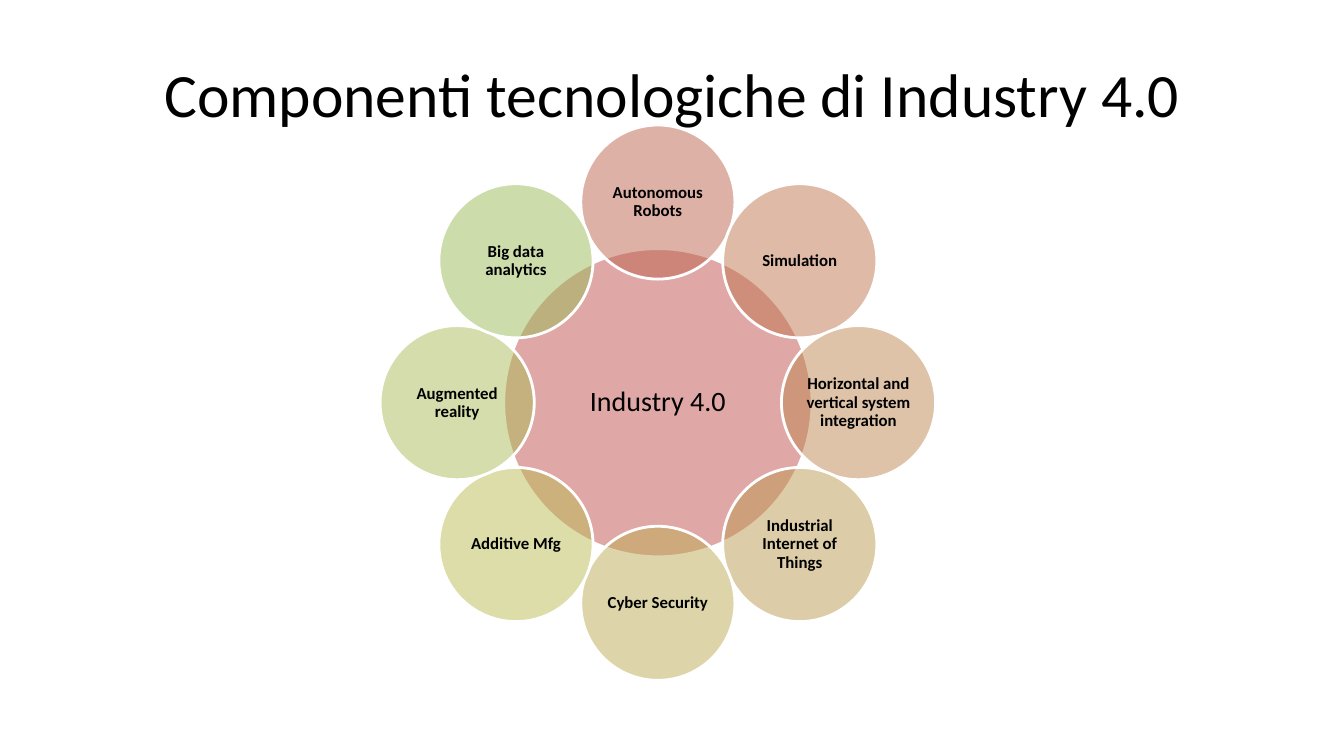
from math import cos, radians, sin

from lxml.etree import SubElement
from pptx import Presentation
from pptx.dml.color import RGBColor
from pptx.enum.shapes import MSO_SHAPE
from pptx.enum.text import MSO_ANCHOR, PP_ALIGN
from pptx.oxml.ns import qn
from pptx.util import Inches, Pt

FONT = "Calibri"
COLORS = {"text": "000000", "outline": "FFFFFF", "hub": "C0504D"}
# Clockwise from the top
COMPONENTS = [
    ("Autonomous Robots", "BF644F"),
    ("Simulation", "BF7750"),
    ("Horizontal and vertical system integration", "BE8952"),
    ("Industrial Internet of Things", "BD9B53"),
    ("Cyber Security", "BDAC55"),
    ("Additive Mfg", "BCBC56"),
    ("Augmented reality", "ABBC58"),
    ("Big data analytics", "9BBB59"),
]


def format_text(frame, size, bold=False):
    frame.word_wrap = True
    frame.vertical_anchor = MSO_ANCHOR.MIDDLE
    paragraph = frame.paragraphs[0]
    paragraph.alignment = PP_ALIGN.CENTER
    font = paragraph.font
    font.name, font.size, font.bold = FONT, Pt(size), bold
    font.color.rgb = RGBColor.from_string(COLORS["text"])
    return paragraph


def place_title(slide, text, left, top, width, height):
    title = slide.shapes.title
    title.left, title.top = Inches(left), Inches(top)
    title.width, title.height = Inches(width), Inches(height)
    title.text_frame.text = text
    format_text(title.text_frame, 44)


def add_circle(slide, center_x, center_y, diameter, color, label, size, inset, bold=False):
    """Add a half-transparent labelled circle around a centre point."""
    circle = slide.shapes.add_shape(
        MSO_SHAPE.OVAL,
        Inches(center_x - diameter / 2), Inches(center_y - diameter / 2),
        Inches(diameter), Inches(diameter))
    circle.shadow.inherit = False
    circle.fill.solid()
    circle.fill.fore_color.rgb = RGBColor.from_string(color)
    fill_color = circle.element.spPr.find(qn("a:solidFill"))[0]
    SubElement(fill_color, qn("a:alpha"), val="50000")
    circle.line.color.rgb = RGBColor.from_string(COLORS["outline"])
    circle.line.width = Pt(2)

    frame = circle.text_frame
    frame.text = label
    frame.margin_left = frame.margin_right = Inches(inset)
    frame.margin_top = frame.margin_bottom = Inches(inset)
    format_text(frame, size, bold).line_spacing = 0.9


def draw_radial_diagram(slide, left, top, side):
    """Draw the hub and its ring of components inside a square box."""
    center_x, center_y = left + side / 2, top + side / 2
    hub_diameter = side * 0.555
    satellite_diameter = hub_diameter / 2
    ring_radius = (side - satellite_diameter) / 2
    add_circle(slide, center_x, center_y, hub_diameter, COLORS["hub"],
               "Industry 4.0", 20, 0.03)
    for index, (label, color) in enumerate(COMPONENTS):
        angle = radians(index * 360 / len(COMPONENTS))
        add_circle(slide, center_x + ring_radius * sin(angle),
                   center_y - ring_radius * cos(angle),
                   satellite_diameter, color, label, 12, 0.02, bold=True)


def main():
    deck = Presentation()
    deck.slide_width, deck.slide_height = Inches(13.33), Inches(7.5)
    slide = deck.slides.add_slide(deck.slide_layouts[5])
    place_title(slide, "Componenti tecnologiche di Industry 4.0", 0.67, 0.3, 12, 1.25)
    draw_radial_diagram(slide, 3.77, 1.24, 5.51)
    deck.save("out.pptx")


if __name__ == "__main__":
    main()
